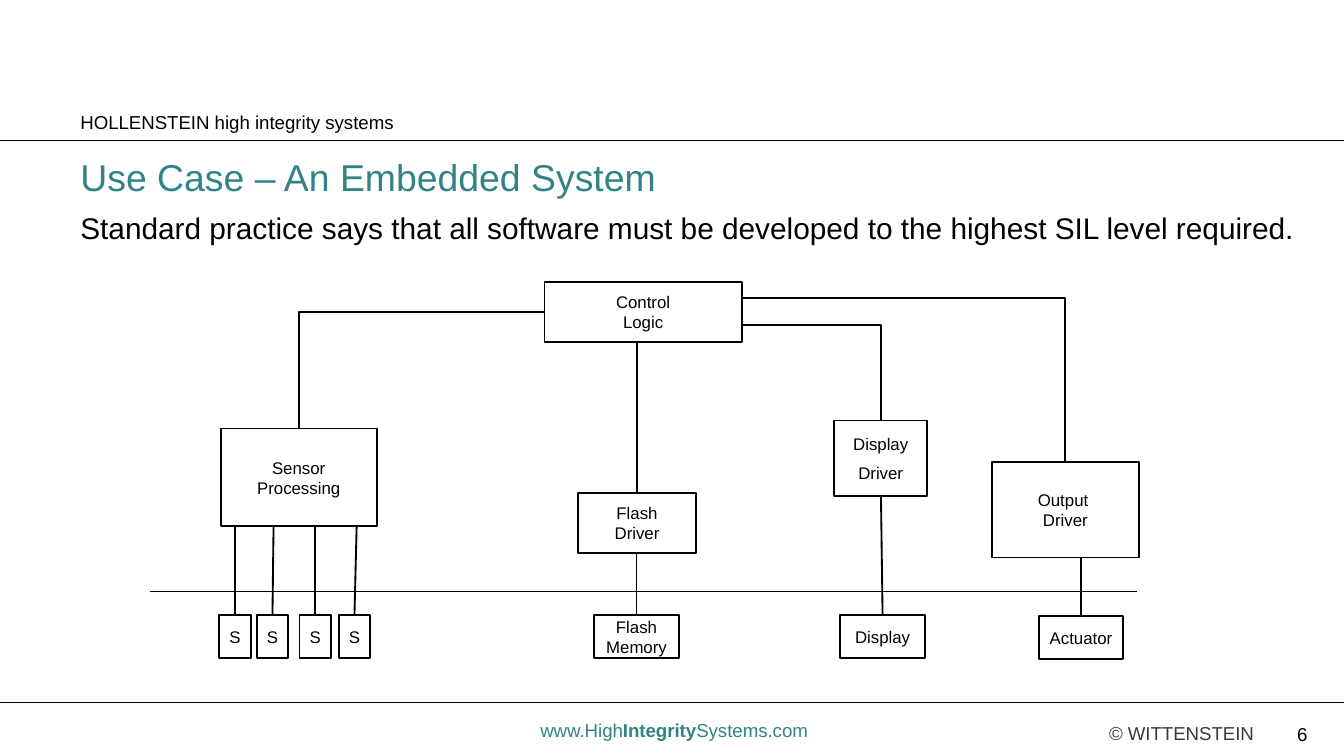
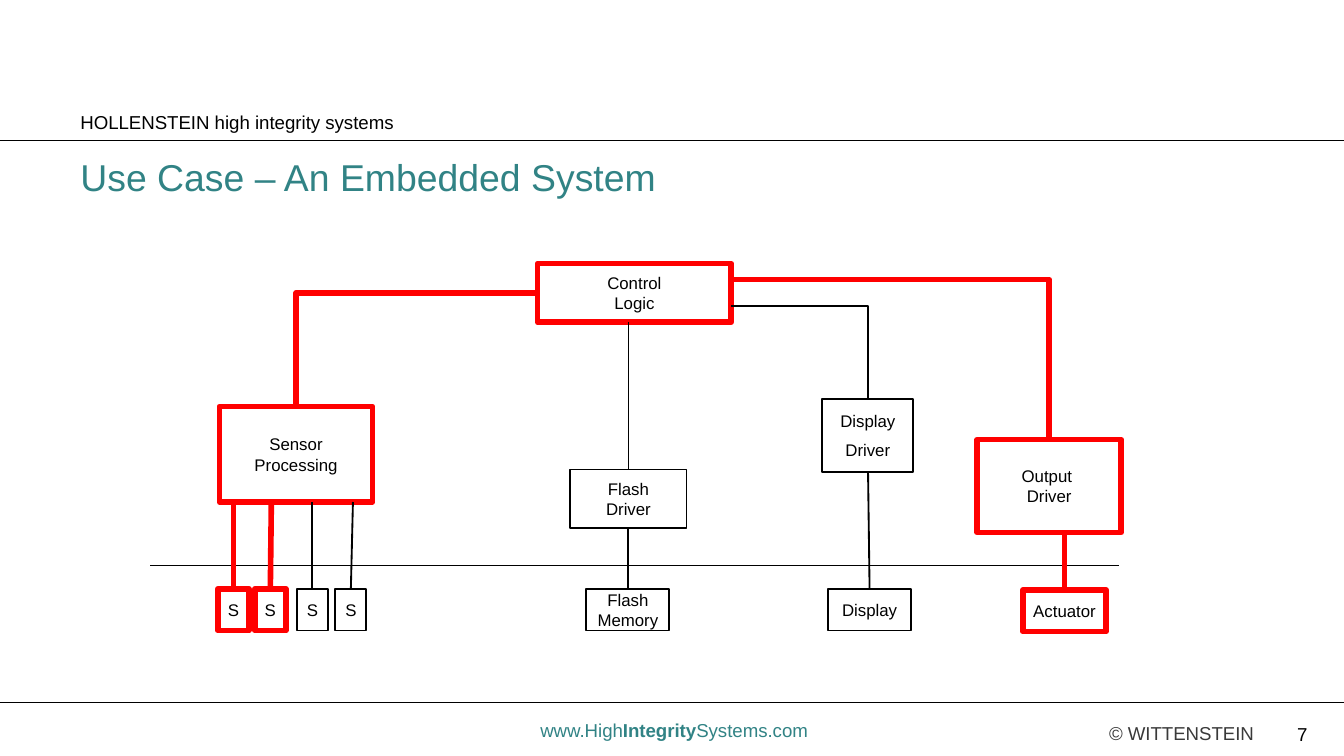
from dataclasses import dataclass

from pptx import Presentation
from pptx.dml.color import RGBColor as RGB
from pptx.enum.shapes import MSO_CONNECTOR as CONN, MSO_SHAPE as SHAPE
from pptx.enum.text import MSO_ANCHOR as ANCHOR, PP_ALIGN as ALIGN
from pptx.oxml.ns import qn
from pptx.oxml.xmlchemy import OxmlElement
from pptx.util import Cm, Pt


@dataclass(frozen=True)
class Theme:
    font: str = "Arial"
    teal: RGB = RGB(0x31, 0x83, 0x85)
    grey: RGB = RGB(0x3A, 0x3A, 0x3A)
    black: RGB = RGB(0, 0, 0)
    red: RGB = RGB(0xFF, 0, 0)
    title: int = 20
    body: int = 16
    small: int = 10
    label: int = 9
    rule: float = 0.1
    thin: int = 1
    thick: int = 3


T = Theme()
WIDTH, HEIGHT = 25.4, 14.29
DIAGRAM_SIZE = (18.64, 7.11)
BUS_Y = 5.85

NODES = {
    "control": (7.45, 0, 3.73, 1.14, ["Control", "Logic"]),
    "display driver": (12.93, 2.62, 1.75, 1.42, ["Display", "Driver"]),
    "output driver": (15.91, 3.41, 2.77, 1.8, ["Output ", "Driver"]),
    "sensor processing": (1.33, 2.77, 2.95, 1.85, ["Sensor", "Processing"]),
    "flash driver": (8.08, 3.99, 2.24, 1.14, ["Flash", "Driver"]),
    "flash memory": (8.39, 6.3, 1.6, 0.81, ["Flash Memory"]),
    "display": (13.04, 6.3, 1.6, 0.81, ["Display"]),
    "actuator": (16.79, 6.32, 1.6, 0.81, ["Actuator"]),
}
SENSORS = {f"sensor {i}": x for i, x in enumerate((1.3, 2.01, 2.82, 3.56), 1)}
NODES.update({name: (x, 6.3, 0.6, 0.81, ["S"]) for name, x in SENSORS.items()})
SPACING = {"display driver": 4.5}

BENT_LINKS = [("sensor processing", "left", 0.57),
              ("display driver", "right", 0.82),
              ("output driver", "right", 0.31)]
STRAIGHT_LINKS = [("control", "flash driver", 0), ("flash driver", "flash memory", 0),
                  ("display driver", "display", -0.03), ("output driver", "actuator", 0)]
STRAIGHT_LINKS += [("sensor processing", name, lean)
                   for name, lean in zip(SENSORS, (0, 0.02, 0, 0.04))]

SLIDES = [
    {"number": 6, "box": (2.84, 5.33, 18.64, 7.11), "critical": set(),
     "lead": "Standard practice says that all software must be developed "
             "to the highest SIL level required."},
    {"number": 7, "box": (2.84, 4.98, 18.31, 6.94), "lead": None,
     "critical": {"control", "sensor processing", "output driver", "actuator",
                  "sensor 1", "sensor 2"}},
]


def apply(target, **values):
    for name, value in values.items():
        setattr(target, name, value)


def margins(tf, x, y):
    apply(tf, margin_left=Cm(x), margin_right=Cm(x),
          margin_top=Cm(y), margin_bottom=Cm(y))


def write(p, runs, size, color, align=ALIGN.LEFT):
    p.alignment = align
    for text, bold in runs:
        r = p.add_run()
        r.text = text
        apply(r.font, name=T.font, size=Pt(size), bold=bold)
        r.font.color.rgb = color


def add_text(s, box, runs, size, color, align=ALIGN.LEFT, inset=(0.25, 0.13), wrap=True):
    tf = s.shapes.add_textbox(*map(Cm, box)).text_frame
    tf.word_wrap = wrap
    margins(tf, *inset)
    write(tf.paragraphs[0], runs, size, color, align)


def add_line(shapes, start, end, color, width, kind=CONN.STRAIGHT):
    line = shapes.add_connector(kind, *map(Cm, (*start, *end)))
    line.line.color.rgb = color
    line.line.width = Pt(width)
    props = line._element.spPr
    props.append(OxmlElement("a:effectLst"))
    if kind == CONN.ELBOW:
        props.find(qn("a:prstGeom")).set("prst", "bentConnector2")


def add_frame(s, number):
    for y in (2.64, 13.28):
        add_line(s.shapes, (0, y), (WIDTH, y), T.black, T.rule)
    add_text(s, (1.27, 1.96, 6.43, 0.69), [("HOLLENSTEIN high integrity systems", False)],
             T.small, T.black, wrap=False)
    address = [("www.High", False), ("Integrity", True), ("Systems.com", False)]
    footers = [((9.78, 13.59, 5.92, 0.36), address, T.teal, ALIGN.CENTER),
               ((20.96, 13.64, 2.84, 0.3), [("© WITTENSTEIN", False)], T.grey, ALIGN.LEFT),
               ((23.57, 13.67, 1.14, 0.3), [(str(number), False)], T.black, ALIGN.RIGHT)]
    for box, runs, color, align in footers:
        add_text(s, box, runs, T.small, color, align, inset=(0, 0))


def add_heading(s, lead):
    add_text(s, (1.27, 2.79, 23.44, 0.94), [("Use Case – An Embedded System", False)],
             T.title, T.teal)
    if lead:
        add_text(s, (1.27, 3.84, 23.9, 1.19), [(lead, False)], T.body, T.black)


def add_node(shapes, box, lines, color, width, spacing):
    sp = shapes.add_shape(SHAPE.RECTANGLE, *map(Cm, box))
    sp.shadow.inherit = False
    sp.fill.background()
    sp.line.color.rgb = color
    sp.line.width = Pt(width)
    tf = sp.text_frame
    apply(tf, word_wrap=True, vertical_anchor=ANCHOR.MIDDLE)
    margins(tf, 0.08, 0.03)
    for i, text in enumerate(lines):
        p = tf.add_paragraph() if i else tf.paragraphs[0]
        if i:
            p.space_before = Pt(spacing)
        write(p, [(text, False)], T.label, T.black, ALIGN.CENTER)


def add_diagram(s, box, critical):
    left, top, width, height = box
    sx, sy = width / DIAGRAM_SIZE[0], height / DIAGRAM_SIZE[1]
    shapes = s.shapes.add_group_shape().shapes

    def at(x, y):
        return left + x * sx, top + y * sy

    def stroke(name):
        return (T.red, T.thick) if name in critical else (T.black, T.thin)

    def top_center(name):
        x, y, w = NODES[name][:3]
        return x + w / 2, y

    add_line(shapes, at(0, BUS_Y), at(DIAGRAM_SIZE[0], BUS_Y), T.black, T.thin)
    for name, (x, y, w, h, lines) in NODES.items():
        add_node(shapes, (*at(x, y), w * sx, h * sy), lines, *stroke(name),
                 SPACING.get(name, 0))
    control_x, _, control_w, _, _ = NODES["control"]
    sides = {"left": control_x, "right": control_x + control_w}
    for name, side, y in BENT_LINKS:
        add_line(shapes, at(sides[side], y), at(*top_center(name)), *stroke(name), CONN.ELBOW)
    for source, name, lean in STRAIGHT_LINKS:
        x, y = top_center(name)
        bottom = NODES[source][1] + NODES[source][3]
        add_line(shapes, at(x + lean, bottom), at(x, y), *stroke(name))


def main():
    prs = Presentation()
    apply(prs, slide_width=Cm(WIDTH), slide_height=Cm(HEIGHT))
    for page in SLIDES:
        s = prs.slides.add_slide(prs.slide_layouts[6])
        add_frame(s, page["number"])
        add_heading(s, page["lead"])
        add_diagram(s, page["box"], page["critical"])
    prs.save("out.pptx")


if __name__ == "__main__":
    main()
